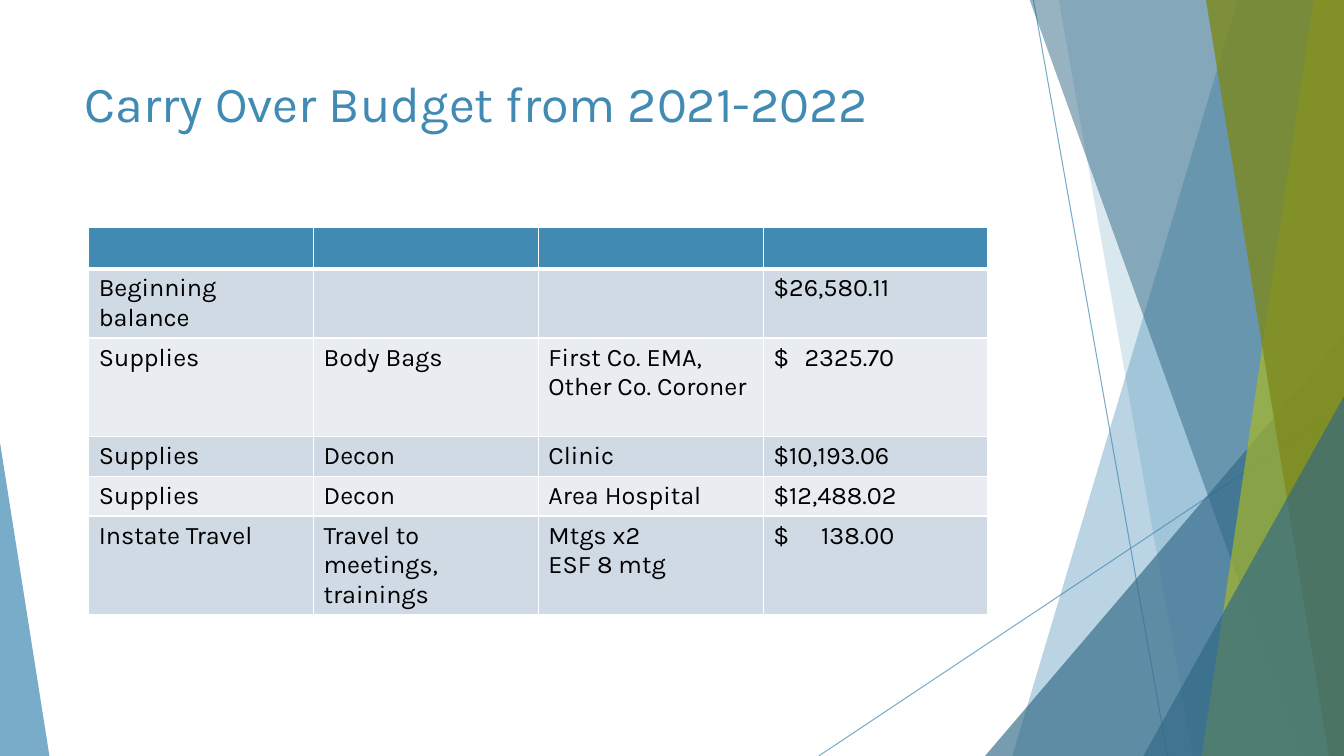
from pptx import Presentation
from pptx.dml.color import RGBColor
from pptx.enum.shapes import MSO_CONNECTOR, MSO_SHAPE
from pptx.enum.text import MSO_ANCHOR, PP_ALIGN
from pptx.oxml.ns import qn
from pptx.util import Inches, Pt
from lxml import etree

STRAIGHT = MSO_CONNECTOR.STRAIGHT
TRIANGLE = MSO_SHAPE.ISOSCELES_TRIANGLE
TOP = MSO_ANCHOR.TOP
LEFT = PP_ALIGN.LEFT

WIDTH, HEIGHT = 13.33, 7.5
BLEED = 0.01
FONT = "Karla"
COLORS = {
    "blue": "418AB3",
    "navy": "316886",
    "lime": "A6B727",
    "olive": "7D891D",
    "band_dark": "CFDAE5",
    "band_light": "E9EDF2",
    "white": "FFFFFF",
    "black": "000000",
}
COLUMN_WIDTH = 2.23
AMOUNT_TAB = 1.2
ROW_HEIGHTS = [0.39, 0.68, 0.98, 0.39, 0.39, 0.98]
BUDGET_ROWS = [
    ["", "", "", ""],
    ["Beginning balance", "", "", "$26,580.11"],
    ["Supplies", "Body Bags", "First Co. EMA, Other Co. Coroner", "$\t2325.70"],
    ["Supplies", "Decon", "Clinic", "$10,193.06"],
    ["Supplies", "Decon", "Area Hospital", "$12,488.02"],
    ["Instate Travel", "Travel to meetings, trainings", "Mtgs x2\nESF 8 mtg", "$\t138.00"],
]


class BudgetSlide:
    """Draws styled elements on the current slide."""

    def __init__(self, presentation):
        self.slide = presentation.slides.add_slide(presentation.slide_layouts[5])
        self.shapes = self.slide.shapes

    def color(self, name):
        return RGBColor.from_string(COLORS[name])

    def set_opacity(self, shape, percent):
        for color in shape._element.spPr.iter(qn("a:srgbClr")):
            etree.SubElement(color, qn("a:alpha")).set("val", str(percent * 1000))

    def paint(self, shape, color, opacity):
        shape.shadow.inherit = False
        shape.fill.solid()
        shape.fill.fore_color.rgb = self.color(color)
        shape.line.fill.background()
        self.set_opacity(shape, opacity)

    def line(self, start, end):
        ends = [Inches(value) for value in (*start, *end)]
        connector = self.shapes.add_connector(STRAIGHT, *ends)
        connector.line.color.rgb = self.color("blue")
        connector.line.width = Pt(0.75)
        self.set_opacity(connector, 70)
        etree.SubElement(connector._element.spPr, qn("a:effectLst"))

    def strip(self, top_x, bottom_x, color, opacity):
        corners = [(WIDTH, -BLEED), (WIDTH, HEIGHT), (bottom_x, HEIGHT)]
        builder = self.shapes.build_freeform(Inches(top_x), Inches(-BLEED))
        builder.add_line_segments([(Inches(x), Inches(y)) for x, y in corners])
        self.paint(builder.convert_to_shape(), color, opacity)

    def triangle(self, left, top, width, apex, color, opacity):
        shape = self.shapes.add_shape(
            TRIANGLE, Inches(left), Inches(top), Inches(width), Inches(HEIGHT - top))
        shape.adjustments[0] = apex
        self.paint(shape, color, opacity)

    def format_text(self, text_frame, size, color):
        for paragraph in text_frame.paragraphs:
            paragraph.alignment = LEFT
            paragraph.font.size = Pt(size)
            for run in paragraph.runs:
                run.font.name = FONT
                run.font.size = Pt(size)
                run.font.color.rgb = self.color(color)

    def title(self, text):
        title = self.shapes.title
        title.left, title.top = Inches(0.74), Inches(0.67)
        title.width, title.height = Inches(9.4), Inches(1.44)
        title.text_frame.text = text
        title.text_frame.vertical_anchor = TOP
        self.format_text(title.text_frame, 36, "blue")

    def add_tab(self, paragraph):
        tabs = etree.Element(qn("a:tabLst"))
        etree.SubElement(tabs, qn("a:tab"), pos=str(Inches(AMOUNT_TAB)), algn="r")
        paragraph._p.get_or_add_pPr().insert(0, tabs)

    def add_borders(self, cell, bottom_width):
        widths = {"lnL": 1, "lnR": 1, "lnT": 1, "lnB": bottom_width}
        properties = cell._tc.get_or_add_tcPr()
        for position, (side, width) in enumerate(widths.items()):
            border = etree.Element(qn(f"a:{side}"), w=str(Pt(width)))
            fill = etree.SubElement(border, qn("a:solidFill"))
            etree.SubElement(fill, qn("a:srgbClr")).set("val", COLORS["white"])
            properties.insert(position, border)

    def table(self, left, top, rows):
        columns = len(rows[0])
        table = self.shapes.add_table(
            len(rows), columns, Inches(left), Inches(top),
            Inches(COLUMN_WIDTH * columns), Inches(sum(ROW_HEIGHTS))).table
        for column in table.columns:
            column.width = Inches(COLUMN_WIDTH)
        for row_index, texts in enumerate(rows):
            table.rows[row_index].height = Inches(ROW_HEIGHTS[row_index])
            band = "band_dark" if row_index % 2 else "band_light"
            for column_index, text in enumerate(texts):
                cell = table.cell(row_index, column_index)
                cell.text_frame.text = text
                cell.fill.solid()
                cell.fill.fore_color.rgb = self.color(band if row_index else "blue")
                self.format_text(cell.text_frame, 18, "black")
                if "\t" in text:
                    self.add_tab(cell.text_frame.paragraphs[0])
                self.add_borders(cell, 1 if row_index else 3)


def main():
    presentation = Presentation()
    presentation.slide_width = Inches(WIDTH)
    presentation.slide_height = Inches(HEIGHT)
    budget = BudgetSlide(presentation)
    budget.line((10.25, 0), (11.58, HEIGHT))
    budget.line((WIDTH, 4.03), (8.12, HEIGHT))
    budget.strip(12.28, 10.04, "blue", 36)
    budget.strip(10.5, 11.83, "blue", 20)
    budget.triangle(9.77, 3.33, 3.56, 1, "navy", 66)
    budget.strip(10.21, 12.91, "navy", 50)
    budget.strip(13.03, 11.92, "lime", 70)
    budget.strip(11.96, 13.18, "olive", 80)
    budget.triangle(11.34, 3.93, 1.99, 1, "navy", 66)
    budget.triangle(0, 4.39, 0.49, 0, "blue", 70)
    budget.title("Carry Over Budget from 2021-2022")
    budget.table(0.88, 2.26, BUDGET_ROWS)
    presentation.save("out.pptx")


if __name__ == "__main__":
    main()
